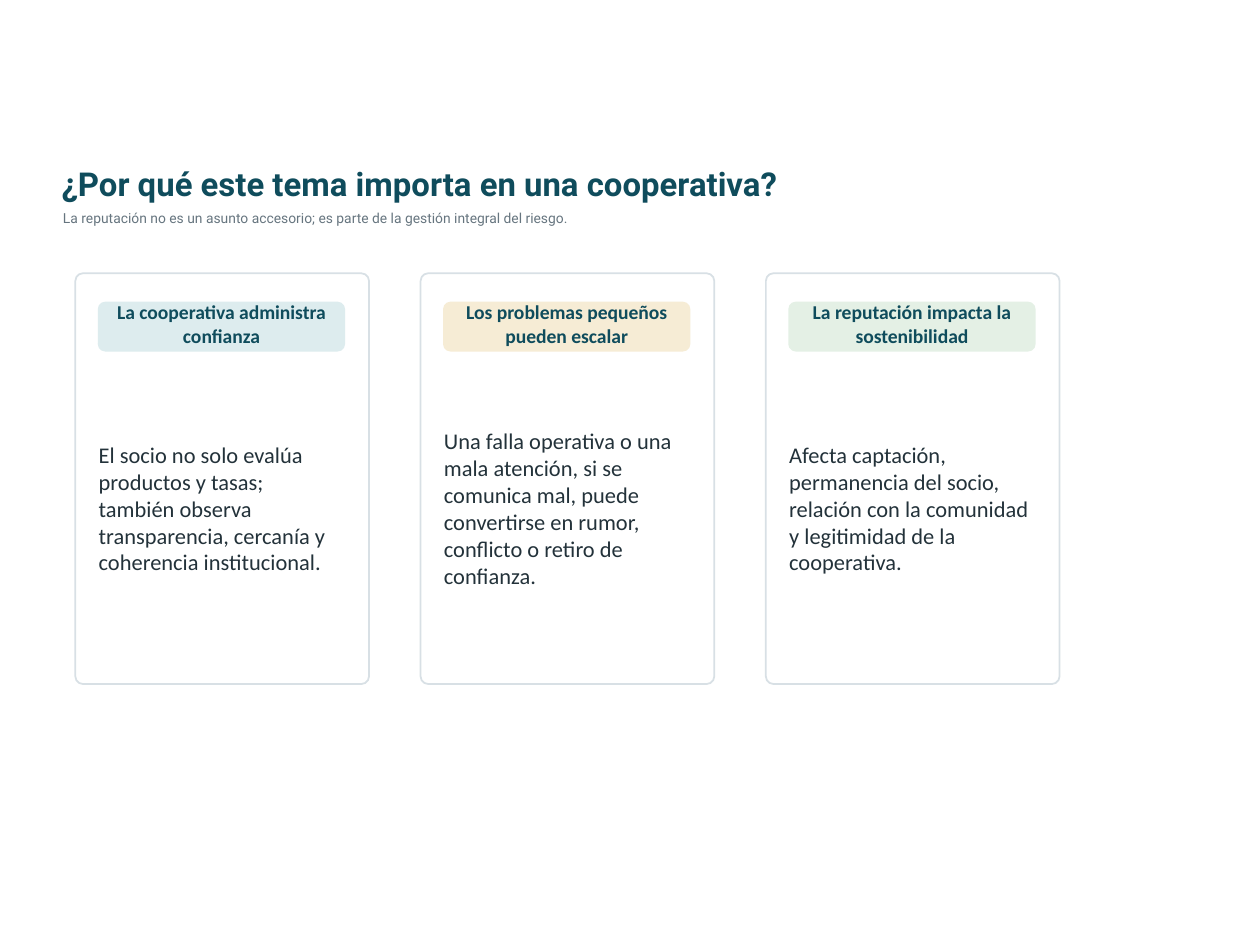
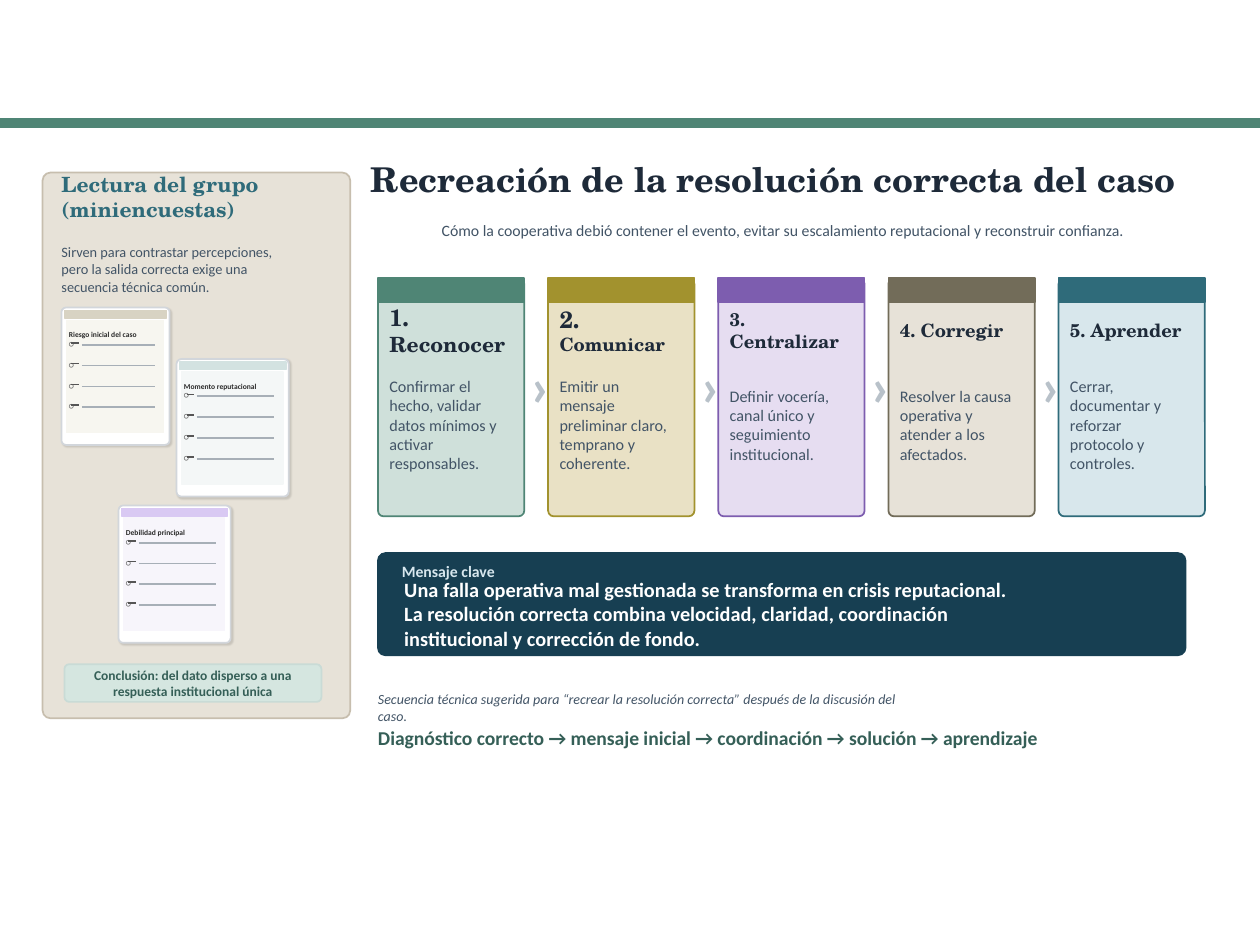
import pptx
import pptx.dml.color
import pptx.enum.shapes
import pptx.enum.text
import pptx.oxml
import pptx.oxml.ns
import pptx.oxml.xmlchemy
import pptx.util

SANS, TITLE_SANS, SERIF = "Calibri", "Roboto", "TeX Gyre Schola"
PETROL, INK, SLATE = "0F4C5C", "1E2A39", "425466"
GREEN, DARK_GREEN, TEAL, SAND = "4F8575", "355F57", "2F6B7A", "E7E2D8"
WHITE = "FFFFFF"
ALIGN = pptx.enum.text.PP_ALIGN
SHAPE = pptx.enum.shapes.MSO_SHAPE
Cm = pptx.util.Cm
color = pptx.dml.color.RGBColor.from_string

SOFT_SHADOW = """<a:effectLst xmlns:a="http://schemas.openxmlformats.org/drawingml/2006/main">
<a:outerShdw blurRad="12700" dist="15240" dir="2700000" algn="tl" rotWithShape="0">
<a:srgbClr val="000000"><a:alpha val="13000"/></a:srgbClr></a:outerShdw></a:effectLst>"""


def write(page, text, left, top, width, height, *, size, ink, font=SANS,
          bold=False, italic=False, align=ALIGN.LEFT, box=None):
    """Write one paragraph per line, in a new text box unless a box is given (Cm)."""
    if box is None:
        box = page.shapes.add_textbox(0, 0, 0, 0)
    box.left, box.top, box.width, box.height = Cm(left), Cm(top), Cm(width), Cm(height)
    frame = box.text_frame
    frame.word_wrap = True
    frame.auto_size = pptx.enum.text.MSO_AUTO_SIZE.NONE
    frame.vertical_anchor = pptx.enum.text.MSO_ANCHOR.MIDDLE
    frame.margin_left = frame.margin_right = frame.margin_top = frame.margin_bottom = 0
    frame.text = text
    for para in frame.paragraphs:
        para.alignment = align
        for span in para.runs:
            span.font.name, span.font.size = font, pptx.util.Pt(size)
            span.font.bold, span.font.italic = bold, italic
            span.font.color.rgb = color(ink)
    return frame


def draw(page, left, top, width, height, fill, line=None, corner=None):
    """Draw a rectangle, rounded when a corner ratio is given (Cm)."""
    kind = SHAPE.RECTANGLE if corner is None else SHAPE.ROUNDED_RECTANGLE
    shape = page.shapes.add_shape(kind, Cm(left), Cm(top), Cm(width), Cm(height))
    if corner is not None:
        shape.adjustments[0] = corner
    shape.shadow.inherit = False
    shape.fill.solid()
    shape.fill.fore_color.rgb = color(fill)
    shape.line.color.rgb = color(line or fill)
    shape.line.width = pptx.util.Pt(1)
    return shape


deck = pptx.Presentation()
deck.slide_width, deck.slide_height = Cm(25.4), Cm(19.05)
title_only = deck.slide_layouts[5]

# Slide 1: why it matters
page = deck.slides.add_slide(title_only)
write(page, "¿Por qué este tema importa en una cooperativa?", 1.24, 3.3, 16.94, 0.81,
      size=18.8, ink=PETROL, font=TITLE_SANS, bold=True, box=page.shapes.title)
write(page, "La reputación no es un asunto accesorio; es parte de la gestión integral del riesgo.",
      1.27, 4.17, 16.21, 0.46, size=7.9, ink="66757F", font=TITLE_SANS)

reasons = [
    ("La cooperativa administra confianza", "DDECEE",
     "El socio no solo evalúa productos y tasas; también observa transparencia, "
     "cercanía y coherencia institucional."),
    ("Los problemas pequeños pueden escalar", "F6ECD5",
     "Una falla operativa o una mala atención, si se comunica mal, puede convertirse "
     "en rumor, conflicto o retiro de confianza."),
    ("La reputación impacta la sostenibilidad", "E4F0E5",
     "Afecta captación, permanencia del socio, relación con la comunidad y "
     "legitimidad de la cooperativa."),
]
for index, (heading, tint, reason) in enumerate(reasons):
    left = 1.52 + 6.96 * index
    draw(page, left, 5.51, 5.92, 8.28, WHITE, "D8E0E5", corner=0.026)
    draw(page, left + 0.47, 6.1, 4.95, 0.97, tint, corner=0.14)
    write(page, heading, left + 0.66, 6.3, 4.57, 0.46,
          size=11.2, ink=PETROL, bold=True, align=ALIGN.CENTER)
    write(page, reason, left + 0.47, 7.72, 4.95, 5.05, size=12.8, ink="23323A")

# Slide 2: resolution of the case
page = deck.slides.add_slide(title_only)
draw(page, 0, 2.39, 25.4, 0.18, GREEN)
write(page, "Recreación de la resolución correcta del caso", 1.24, 3.18, 22.48, 0.86,
      size=19.5, ink=INK, font=SERIF, bold=True, align=ALIGN.RIGHT, box=page.shapes.title)
write(page, "Cómo la cooperativa debió contener el evento, evitar su escalamiento "
      "reputacional y reconstruir confianza.", 1.3, 4.22, 21.34, 0.84,
      size=9, ink=SLATE, align=ALIGN.RIGHT)

# Survey panel
draw(page, 0.86, 3.48, 6.2, 11, SAND, "C7BEAE", corner=0.025)
write(page, "Lectura del grupo\n(miniencuestas)", 1.24, 3.35, 4.78, 1.24,
      size=12, ink=TEAL, font=SERIF, bold=True)
write(page, "Sirven para contrastar percepciones,\npero la salida correcta exige una\n"
      "secuencia técnica común.", 1.24, 4.75, 4.67, 1.35, size=8.2, ink=SLATE)

surveys = [
    ("Riesgo inicial del caso", 1.24, 6.2, 2.18, "D8D3C3", "F7F6F0"),
    ("Momento reputacional", 3.56, 7.24, 2.26, "D3E2E1", "F4F7F7"),
    ("Debilidad principal", 2.39, 10.19, 2.26, "D9C9F3", "F7F5FB"),
]
for question, left, top, width, header, paper in surveys:
    card = draw(page, left, top, width, 2.77, WHITE, "D2D6DB", corner=0.042)
    properties = card._element.spPr
    properties.replace(properties.find(pptx.oxml.ns.qn("a:effectLst")),
                       pptx.oxml.parse_xml(SOFT_SHADOW))
    draw(page, left + 0.06, top + 0.06, width - 0.12, 0.15, header)
    draw(page, left + 0.1, top + 0.26, width - 0.22, 2.26, paper)
    write(page, question, left + 0.15, top + 0.33, width - 0.3, 0.43,
          size=4.3, ink="2A2A2A", bold=True)
    for option in range(4):
        row = top + 0.42 * option
        write(page, "○", left + 0.15, row + 0.64, 0.15, 0.18, size=5.2, ink="666666")
        for start, end, y, ink in [(0.2, 0.35, 0.71, "555555"),
                                   (0.41, width - 0.3, 0.75, "A7AFB7")]:
            rule = page.shapes.add_connector(
                pptx.enum.shapes.MSO_CONNECTOR.STRAIGHT,
                Cm(left + start), Cm(row + y), Cm(left + end), Cm(row + y))
            rule.line.color.rgb = color(ink)
            rule.line.width = pptx.util.Pt(1)
            rule._element.spPr.append(pptx.oxml.xmlchemy.OxmlElement("a:effectLst"))

draw(page, 1.3, 13.39, 5.18, 0.76, "D5E6E0", "C9DBD6", corner=0.125)
write(page, "Conclusión: del dato disperso a una\nrespuesta institucional única",
      1.65, 13.51, 4.47, 0.53, size=7.7, ink=DARK_GREEN, bold=True, align=ALIGN.CENTER)

# Five steps: heading, number size, name size, tint, accent, action
steps = [
    ("1.\nReconocer", 13.5, 12, "CFE0DA", GREEN,
     "Confirmar el\nhecho, validar\ndatos mínimos y\nactivar\nresponsables."),
    ("2.\nComunicar", 13.5, 10.5, "E9E1C5", "A2922E",
     "Emitir un\nmensaje\npreliminar claro,\ntemprano y\ncoherente."),
    ("3.\nCentralizar", 10.5, 10.5, "E6DDF1", "7D5DAF",
     "Definir vocería,\ncanal único y\nseguimiento\ninstitucional."),
    ("4. Corregir", 10.5, 10.5, SAND, "726C59",
     "Resolver la causa\noperativa y\natender a los\nafectados."),
    ("5. Aprender", 10.5, 10.5, "D8E7EC", TEAL,
     "Cerrar,\ndocumentar y\nreforzar\nprotocolo y\ncontroles."),
]
for index, (heading, number_size, name_size, tint, accent, action) in enumerate(steps):
    left = 7.62 + 3.43 * index
    draw(page, left, 5.61, 2.95, 4.8, tint, accent, corner=0.039)
    draw(page, left, 5.61, 2.95, 0.48, accent)
    frame = write(page, heading, left + 0.23, 6.2, 2.39, 0.91,
                  size=name_size, ink=INK, font=SERIF, bold=True)
    frame.paragraphs[0].runs[0].font.size = pptx.util.Pt(number_size)
    write(page, action, left + 0.23, 7.52, 2.34, 2.08, size=9.2, ink=SLATE)
    if index < len(steps) - 1:
        write(page, "›", left + 3, 7.42, 0.53, 0.66,
              size=31.5, ink="B8C1C9", bold=True, align=ALIGN.CENTER)

# Key message and closing lines
draw(page, 7.62, 11.15, 16.28, 2.06, "173F52", corner=0.074)
write(page, "Mensaje clave", 8.1, 11.33, 2.46, 0.36, size=9, ink="D7E7EE", bold=True)
write(page, "Una falla operativa mal gestionada se transforma en crisis reputacional.\n"
      "La resolución correcta combina velocidad, claridad, coordinación\n"
      "institucional y corrección de fondo.", 8.15, 11.84, 14.86, 1.07,
      size=11.6, ink=WHITE, bold=True)
write(page, "Secuencia técnica sugerida para “recrear la resolución correcta” después de la "
      "discusión del\ncaso.", 7.62, 13.97, 14.27, 0.58, size=8, ink=SLATE, italic=True)
write(page, "Diagnóstico correcto → mensaje inicial → coordinación → solución → aprendizaje",
      7.62, 14.6, 15.8, 0.53, size=11.2, ink=DARK_GREEN, bold=True)

deck.save("out.pptx")
